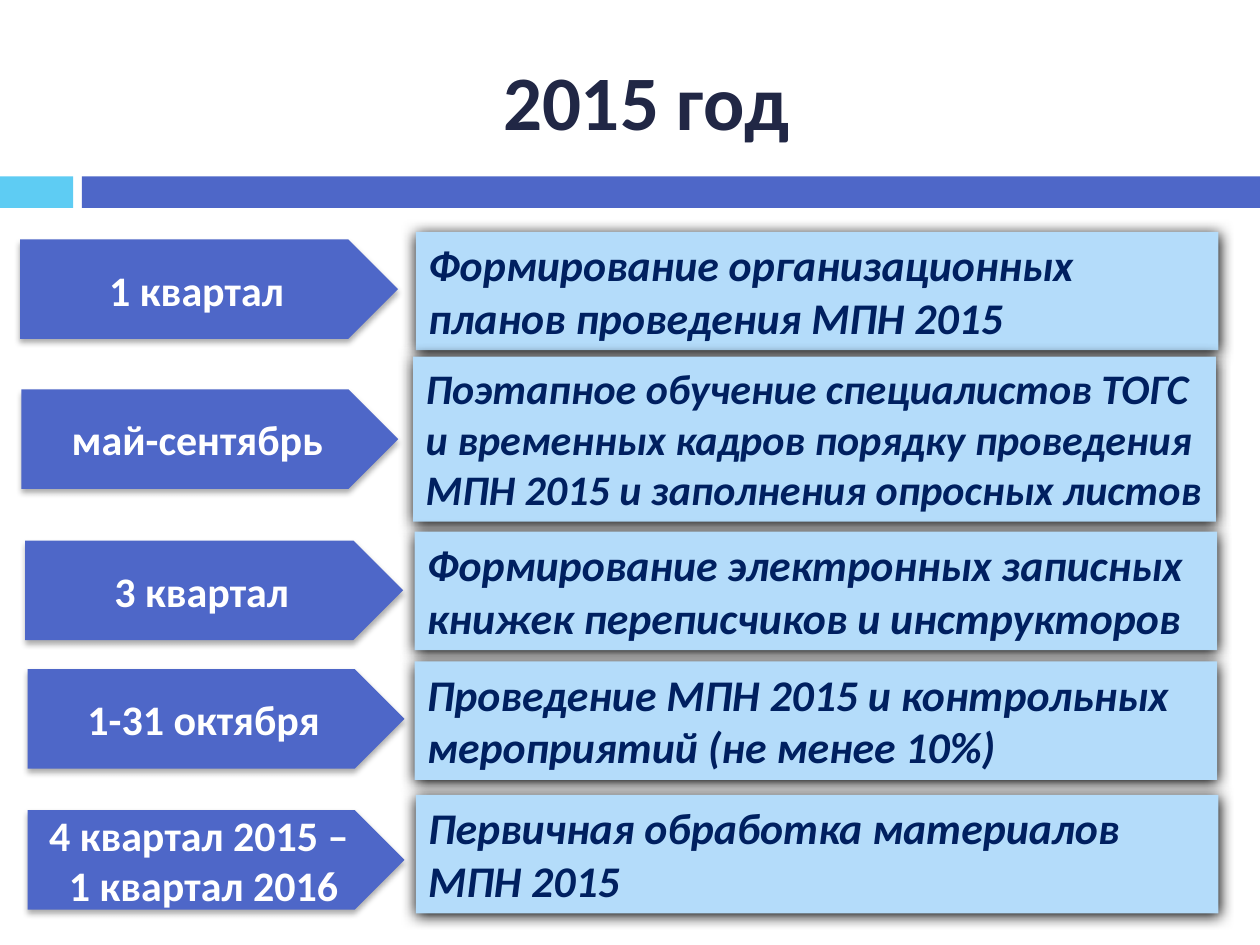
from dataclasses import dataclass

import pptx
import pptx.dml.color
import pptx.enum.shapes
import pptx.enum.text
import pptx.oxml
import pptx.oxml.ns
import pptx.util
from pptx.util import Inches

SHAPE = pptx.enum.shapes.MSO_SHAPE
ALIGN = pptx.enum.text.PP_ALIGN
ANCHOR = pptx.enum.text.MSO_ANCHOR


@dataclass(frozen=True)
class Theme:
    font: str = "Calibri"
    title: str = "212745"
    accent: str = "4E67C8"
    marker: str = "5ECCF3"
    panel: str = "B4DCFA"
    panel_text: str = "002060"
    white: str = "FFFFFF"
    title_size: int = 44
    label_size: int = 24
    panel_size: int = 25
    label_shadow: tuple = (32, 3.5, 2.2)
    panel_shadow: tuple = (100, 8.5, 1)


THEME = Theme()

STAGES = [
    ((0.16, 1.9, 3), "1 квартал", (3.3, 1.84, 0.94), THEME.panel_size,
     "Формирование организационных планов проведения МПН 2015"),
    ((0.17, 3.09, 2.99), "май-сентябрь", (3.28, 2.83, 1.31), THEME.label_size,
     "Поэтапное обучение специалистов ТОГС и временных кадров порядку "
     "проведения МПН 2015 и заполнения опросных листов"),
    ((0.2, 4.29, 3), "3 квартал", (3.29, 4.22, 0.94), THEME.panel_size,
     "Формирование электронных записных книжек переписчиков и инструкторов"),
    ((0.22, 5.31, 2.99), "1-31 октября", (3.29, 5.25, 0.94), THEME.panel_size,
     "Проведение МПН 2015 и контрольных мероприятий (не менее 10%)"),
    ((0.22, 6.43, 2.99), "4 квартал 2015 – \n1 квартал 2016",
     (3.3, 6.31, 0.94), THEME.panel_size,
     "Первичная обработка материалов \nМПН 2015"),
]


def write_text(sp, text, align, anchor, color, size, italic=False):
    """Fill a shape with one formatted paragraph."""
    tf = sp.text_frame
    for name, value in {"word_wrap": True, "vertical_anchor": anchor}.items():
        setattr(tf, name, value)
    p = tf.paragraphs[0]
    p.text = text
    p.alignment = align
    fmt = {"name": THEME.font, "size": pptx.util.Pt(size), "bold": True, "italic": italic}
    for r in p.runs:
        for name, value in fmt.items():
            setattr(r.font, name, value)
        r.font.color.rgb = pptx.dml.color.RGBColor.from_string(color)


def add_block(s, kind, box, fill, shadow=None):
    """Add a borderless filled shape with an optional downward shadow."""
    sp = s.shapes.add_shape(kind, *map(Inches, box))
    sp.fill.solid()
    sp.fill.fore_color.rgb = pptx.dml.color.RGBColor.from_string(fill)
    sp.line.fill.background()
    sp.shadow.inherit = False
    if shadow:
        alpha, blur, dist = shadow
        effects = sp._element.spPr.find(pptx.oxml.ns.qn("a:effectLst"))
        effects.append(pptx.oxml.parse_xml(
            f'<a:outerShdw {pptx.oxml.ns.nsdecls("a")} blurRad="{pptx.util.Pt(blur)}" '
            f'dist="{pptx.util.Pt(dist)}" dir="5400000" algn="ctr" rotWithShape="0">'
            f'<a:srgbClr val="000000"><a:alpha val="{alpha * 1000}"/></a:srgbClr>'
            '</a:outerShdw>'))
    return sp


def add_title(s, text):
    """Place and format the title placeholder."""
    sp = s.shapes.title
    box = {"left": 0.67, "top": 0.25, "width": 8.92, "height": 1.08}
    for name, value in box.items():
        setattr(sp, name, Inches(value))
    write_text(sp, text, ALIGN.CENTER, ANCHOR.MIDDLE, THEME.title, THEME.title_size)


def add_label(s, left, top, width, text):
    """Add a period arrow."""
    sp = add_block(s, SHAPE.PENTAGON, (left, top, width, 0.79), THEME.accent, THEME.label_shadow)
    write_text(sp, text, ALIGN.CENTER, ANCHOR.MIDDLE, THEME.white, THEME.label_size)


def add_panel(s, left, top, height, size, text):
    """Add the description panel of a period."""
    sp = add_block(s, SHAPE.RECTANGLE, (left, top, 6.37, height), THEME.panel, THEME.panel_shadow)
    write_text(sp, text, ALIGN.LEFT, ANCHOR.TOP, THEME.panel_text, size, italic=True)
    sp.text_frame.auto_size = pptx.enum.text.MSO_AUTO_SIZE.SHAPE_TO_FIT_TEXT


def main():
    """Build the schedule slide."""
    prs = pptx.Presentation()
    prs.slide_width, prs.slide_height = Inches(10), Inches(7.5)
    s = prs.slides.add_slide(prs.slide_layouts[5])
    add_block(s, SHAPE.RECTANGLE, (0, 1.4, 0.58, 0.25), THEME.marker)
    add_block(s, SHAPE.RECTANGLE, (0.65, 1.4, 9.35, 0.25), THEME.accent)
    add_title(s, "2015 год")
    for label_box, label, panel_box, size, text in STAGES:
        add_label(s, *label_box, label)
        add_panel(s, *panel_box, size, text)
    prs.save("out.pptx")


if __name__ == "__main__":
    main()
